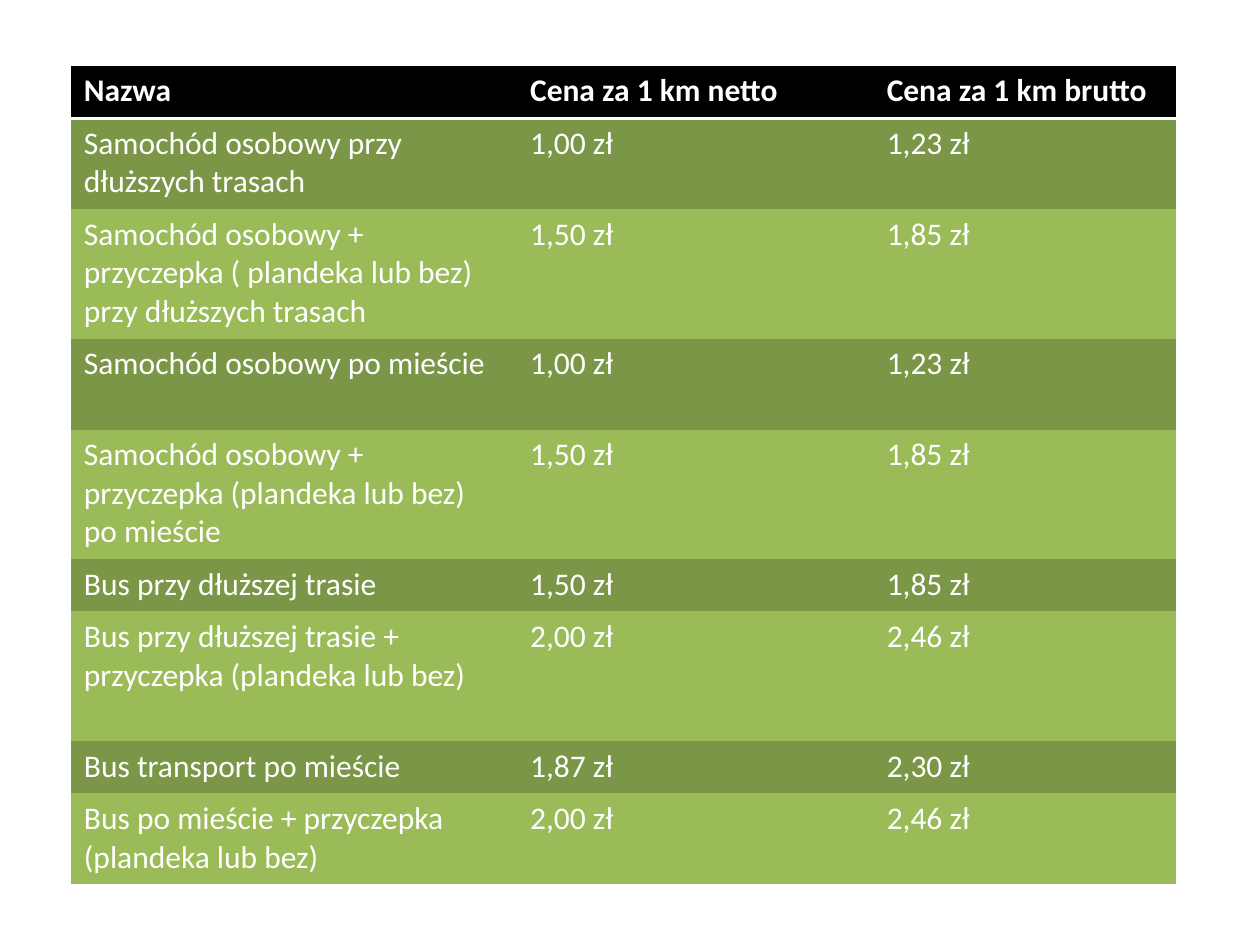
from dataclasses import dataclass

from lxml.etree import SubElement
from pptx import Presentation
from pptx.dml.color import RGBColor
from pptx.oxml.ns import qn
from pptx.util import Pt


@dataclass(frozen=True)
class Theme:
    font: str = "Calibri"
    size: int = 18
    text: str = "FFFFFF"
    header: str = "000000"
    bands: tuple = ("7C9647", "9BBB59")
    rule: str = "FFFFFF"
    rule_width: int = 2
    line_height: int = 22
    row_padding: int = 8


THEME = Theme()
PLAIN_STYLE = "{2D5ABB26-0587-4C30-8999-92F81FD0307C}"  # no style, no grid
COLUMN_SHARES = (0.404, 0.323, 0.273)

HEADINGS = ("Nazwa", "Cena za 1 km netto", "Cena za 1 km brutto")
# Name, net price, gross price, row height in text lines
PRICES = [
    ("Samochód osobowy przy dłuższych trasach", "1,00 zł", "1,23 zł", 2),
    ("Samochód osobowy + przyczepka ( plandeka lub bez) przy dłuższych trasach",
     "1,50 zł", "1,85 zł", 3),
    ("Samochód osobowy po mieście", "1,00 zł", "1,23 zł", 2),
    ("Samochód osobowy + przyczepka (plandeka lub bez) po mieście",
     "1,50 zł", "1,85 zł", 3),
    ("Bus przy dłuższej trasie", "1,50 zł", "1,85 zł", 1),
    ("Bus przy dłuższej trasie + przyczepka (plandeka lub bez)",
     "2,00 zł", "2,46 zł", 3),
    ("Bus transport po mieście", "1,87 zł", "2,30 zł", 1),
    ("Bus po mieście + przyczepka (plandeka lub bez)", "2,00 zł", "2,46 zł", 2),
]


def add_bottom_border(cell, color, width):
    tc_pr = cell._tc.get_or_add_tcPr()
    ln = SubElement(tc_pr, qn("a:lnB"), w=str(Pt(width)))
    fill = SubElement(ln, qn("a:solidFill"))
    SubElement(fill, qn("a:srgbClr"), val=color)


def format_cell(cell, text, fill, bold=False):
    cell.text_frame.text = text
    font = cell.text_frame.paragraphs[0].runs[0].font
    font.name, font.size, font.bold = THEME.font, Pt(THEME.size), bold
    font.color.rgb = RGBColor.from_string(THEME.text)
    if bold:  # the border must precede the fill in the cell properties
        add_bottom_border(cell, THEME.rule, THEME.rule_width)
    cell.fill.solid()
    cell.fill.fore_color.rgb = RGBColor.from_string(fill)


def add_price_table(s, left, top, width):
    rows = [(*HEADINGS, 1), *PRICES]
    heights = [THEME.row_padding + THEME.line_height * row[-1] for row in rows]
    frame = s.shapes.add_table(len(rows), len(HEADINGS), Pt(left), Pt(top),
                               Pt(width), Pt(sum(heights)))
    table = frame.table
    table.horz_banding = False
    table._tbl.tblPr.find(qn("a:tableStyleId")).text = PLAIN_STYLE

    # Column widths
    for column, share in zip(table.columns, COLUMN_SHARES):
        column.width = Pt(width * share)

    # Header row, then alternating bands
    for i, (*texts, _) in enumerate(rows):
        table.rows[i].height = Pt(heights[i])
        fill = THEME.bands[(i - 1) % 2] if i else THEME.header
        for j, text in enumerate(texts):
            format_cell(table.cell(i, j), text, fill, bold=i == 0)


def main():
    prs = Presentation()
    prs.slide_width, prs.slide_height = Pt(720), Pt(540)
    s = prs.slides.add_slide(prs.slide_layouts[6])
    add_price_table(s, left=40.8, top=37.5, width=631)
    prs.save("out.pptx")


if __name__ == "__main__":
    main()
